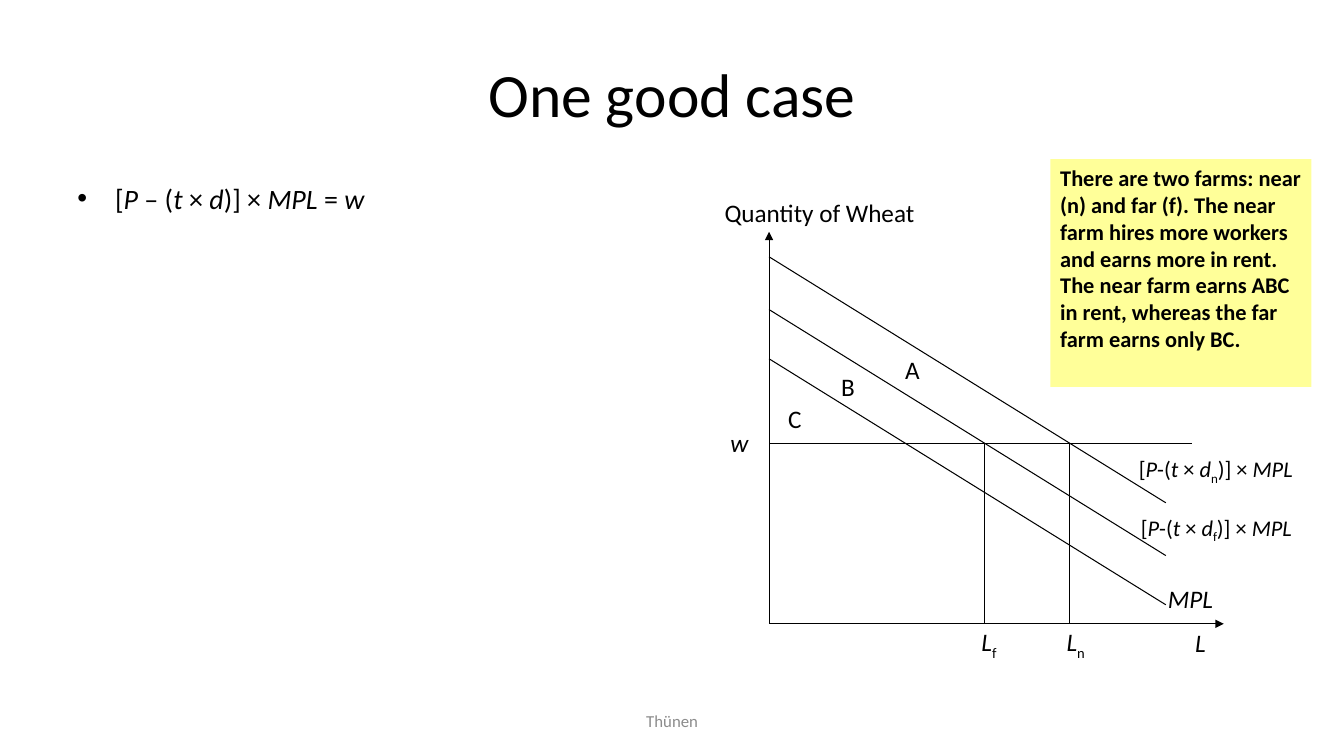
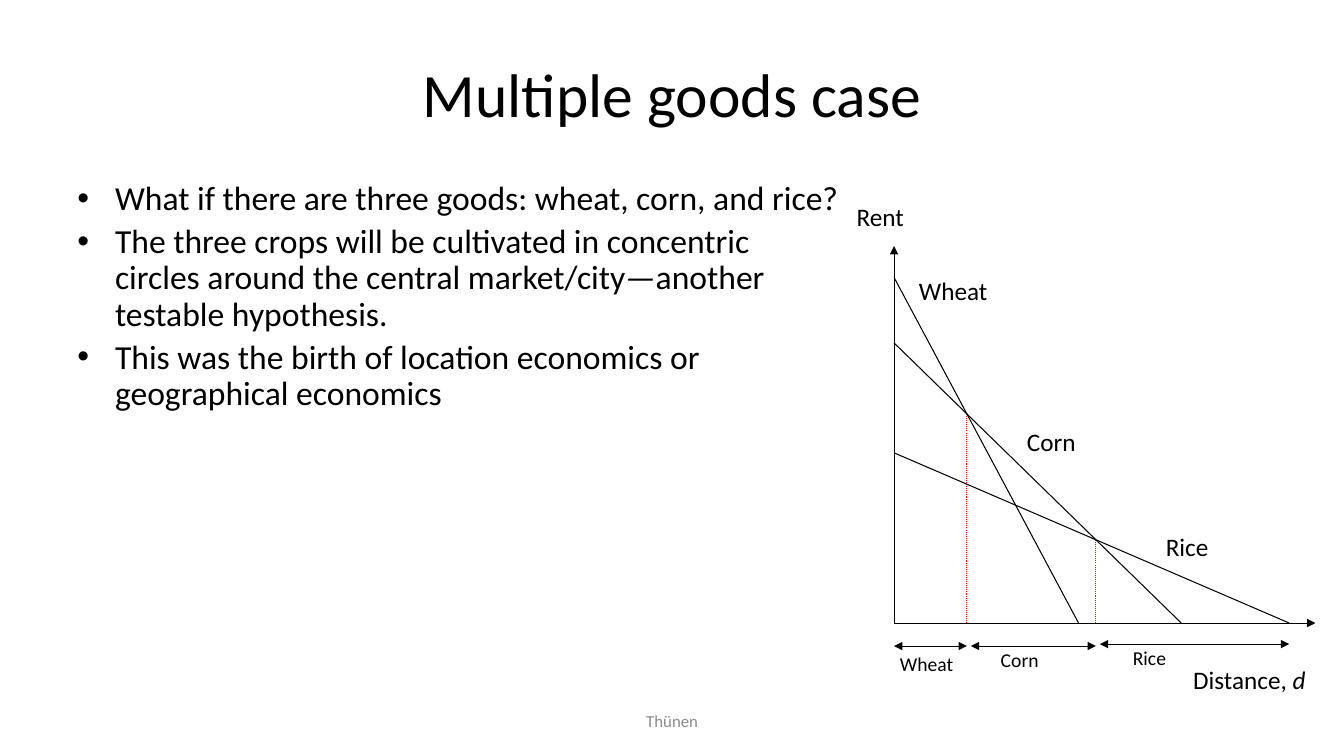
from lxml import etree
from pptx import Presentation
from pptx.dml.color import RGBColor
from pptx.enum.dml import MSO_LINE
from pptx.enum.shapes import MSO_CONNECTOR
from pptx.enum.text import MSO_ANCHOR, PP_ALIGN
from pptx.oxml.ns import qn
from pptx.util import Cm, Pt

STRAIGHT, DOTTED = MSO_CONNECTOR.STRAIGHT, MSO_LINE.ROUND_DOT
TOP, MIDDLE = MSO_ANCHOR.TOP, MSO_ANCHOR.MIDDLE
LEFT, CENTER = PP_ALIGN.LEFT, PP_ALIGN.CENTER

# Shared look; boxes are left, top, width, height in cm
FONT = "Calibri"
BLACK, GREY, RED, YELLOW = "000000", "8C8C8C", "FF0000", "FFFF99"
SLIDE_SIZE = (33.87, 19.05)
TITLE_BOX = (1.7, 0.76, 30.48, 3.18)
FOOTER_BOX = (11.58, 17.65, 10.72, 1.02)
BULLET_INDENT = 0.95


def rgb(value):
    return RGBColor.from_string(value)


# Text: a line is a list of (text, style) runs; i italic, b bold, s subscript
def add_runs(paragraph, runs, size, color=BLACK):
    for text, style in runs:
        run = paragraph.add_run()
        run.text = text
        font = run.font
        font.name, font.size = FONT, Pt(size)
        font.color.rgb = rgb(color)
        font.italic, font.bold = "i" in style, "b" in style
        if "s" in style:
            run._r.get_or_add_rPr().set("baseline", "-25000")


def add_text(slide, box, runs, size, color=BLACK, align=LEFT, anchor=TOP):
    textbox = slide.shapes.add_textbox(*map(Cm, box))
    frame = textbox.text_frame
    frame.word_wrap = True
    frame.vertical_anchor = anchor
    paragraph = frame.paragraphs[0]
    paragraph.alignment = align
    add_runs(paragraph, runs, size, color)
    return textbox


def add_bullets(slide, box, items, size, line_spacing):
    frame = slide.shapes.add_textbox(*map(Cm, box)).text_frame
    frame.word_wrap = True
    for index, runs in enumerate(items):
        paragraph = frame.add_paragraph() if index else frame.paragraphs[0]
        paragraph.line_spacing = line_spacing
        paragraph.space_before = Pt(size * 0.2)
        add_runs(paragraph, runs, size)
        properties = paragraph._p.get_or_add_pPr()
        properties.set("marL", str(Cm(BULLET_INDENT)))
        properties.set("indent", str(-Cm(BULLET_INDENT)))
        etree.SubElement(properties, qn("a:buFont")).set("typeface", "Arial")
        etree.SubElement(properties, qn("a:buChar")).set("char", "•")


class Diagram:
    """Places parts by their distance right of and above the axis origin."""

    def __init__(self, slide, origin, width, height):
        self.slide, self.origin = slide, origin
        self.line((0, 0), (width, 0), tail=True)
        self.line((0, 0), (0, height), tail=True)

    def place(self, x, y):
        return self.origin[0] + x, self.origin[1] - y

    def line(self, start, end, color=BLACK, dash=None, head=False, tail=False):
        ends = self.place(*start) + self.place(*end)
        connector = self.slide.shapes.add_connector(STRAIGHT, *map(Cm, ends))
        connector.line.color.rgb = rgb(color)
        connector.line.width = Pt(0.75)
        if dash:
            connector.line.dash_style = dash
        outline = connector.line._get_or_add_ln()
        for tag, wanted in (("a:headEnd", head), ("a:tailEnd", tail)):
            if wanted:
                etree.SubElement(outline, qn(tag)).set("type", "triangle")
        etree.SubElement(connector._element.spPr, qn("a:effectLst"))

    def label(self, x, y, width, runs, size=18):
        add_text(self.slide, (*self.place(x, y), width, 1.02), runs, size)


def add_base_slide(prs, title_text):
    slide = prs.slides.add_slide(prs.slide_layouts[5])
    title = slide.shapes.title
    title.left, title.top, title.width, title.height = map(Cm, TITLE_BOX)
    frame = title.text_frame
    frame.vertical_anchor = MIDDLE
    frame.paragraphs[0].alignment = CENTER
    add_runs(frame.paragraphs[0], [(title_text, "")], 44)
    add_text(slide, FOOTER_BOX, [("Thünen", "")], 12, GREY, CENTER, MIDDLE)
    return slide


def value_of_labour(farm):
    return [("[", ""), ("P", "i"), ("-(", ""), ("t ", "i"), ("× ", ""),
            ("d", "i"), (farm, "s"), (")] × ", ""), ("MPL", "i")]


def add_labour_diagram(slide, origin):
    diagram = Diagram(slide, origin, 11.46, 9.88)
    run, drop, wage = 10, 6.2, 4.55
    near, far, product = 9.25, 7.92, 6.68

    # Parallel demand curves and the wage
    for height in (product, far, near):
        diagram.line((0, height), (run, height - drop))
    diagram.line((0, wage), (10.65, wage))

    # Labour hired by each farm, where its curve meets the wage
    for height, farm in ((far, "f"), (near, "n")):
        hired = (height - wage) * run / drop
        diagram.line((hired, wage), (hired, 0))
        diagram.label(hired - 0.33, 0.05, 2.03, [("L", "i"), (farm, "s")])

    # Curve names
    diagram.label(9.8, 1.14, 2.03, [("MPL", "i")])
    diagram.label(9.12, 2.9, 4.88, value_of_labour("f"), 16)
    diagram.label(9.07, 4.37, 5.21, value_of_labour("n"), 16)

    # Rent areas
    for name, x, y in (("A", 3.18, 6.91), ("B", 1.57, 6.48), ("C", 0.23, 5.69)):
        diagram.label(x, y, 1.04, [(name, "")])

    # Axis names
    diagram.label(10.49, 0.03, 2.03, [("L", "i")])
    diagram.label(-1.22, 5.08, 1.57, [("w", "i")])
    diagram.label(-1.37, 10.87, 6.48, [("Quantity of Wheat", "")])


def add_rent_diagram(slide, origin):
    diagram = Diagram(slide, origin, 10.62, 9.5)
    # Name, rent at the market, reach, curve label, zone label, zone arrow height
    crops = [
        ("Wheat", 8.71, 4.65, (0.38, 8.89), (-0.1, -0.61), -0.58),
        ("Corn", 7.06, 7.24, (3.1, 5.08), (2.44, -0.51), -0.58),
        ("Rice", 4.29, 9.96, (6.6, 2.44), (5.77, -0.46), -0.53),
    ]

    # Zone borders, where the rents of neighbouring crops are equal
    borders = [0]
    for (_, rent, reach, *_), (_, next_rent, next_reach, *_) in zip(crops, crops[1:]):
        border = (rent - next_rent) / (rent / reach - next_rent / next_reach)
        diagram.line((border, rent * (1 - border / reach)), (border, 0), RED, DOTTED)
        borders.append(border)
    borders.append(crops[-1][2])

    # Rent curves and growing zones
    for index, (name, rent, reach, curve_at, zone_at, level) in enumerate(crops):
        diagram.line((0, rent), (reach, 0))
        start = borders[index] + (0.1 if index else 0)
        diagram.line((start, level), (borders[index + 1], level), head=True, tail=True)
        diagram.label(*curve_at, 2.62, [(name, "")])
        diagram.label(*zone_at, 2.62, [(name, "")], 14)

    # Axis names
    diagram.label(7.29, -0.91, 3.84, [("Distance, ", ""), ("d", "i")])
    diagram.label(-1.19, 10.74, 2.11, [("Rent", "")])


def add_one_good_slide(prs):
    slide = add_base_slide(prs, "One good case")
    condition = [("[", ""), ("P", "i"), (" – (", ""), ("t ", "i"), ("× ", ""),
                 ("d", "i"), (")] × ", ""), ("MPL", "i"), (" = ", ""), ("w", "i")]
    add_bullets(slide, (1.7, 4.45, 15, 12.57), [condition], 20, 1.0)
    add_labour_diagram(slide, (19.38, 15.72))
    note = add_text(slide, (26.47, 4.01, 6.58, 5.74), [(
        "There are two farms: near (n) and far (f). The near farm hires more "
        "workers and earns more in rent. The near farm earns ABC in rent, "
        "whereas the far farm earns only BC.", "b")], 16)
    note.fill.solid()
    note.fill.fore_color.rgb = rgb(YELLOW)


def add_multiple_goods_slide(prs):
    slide = add_base_slide(prs, "Multiple goods case")
    points = [
        "What if there are three goods: wheat, corn, and rice?",
        "The three crops will be cultivated in concentric circles around the "
        "central market/city—another testable hypothesis.",
        "This was the birth of location economics or geographical economics",
    ]
    add_bullets(slide, (1.7, 4.45, 19.71, 12.57),
                [[(point, "")] for point in points], 24, 0.9)
    add_rent_diagram(slide, (22.53, 15.7))


def main():
    prs = Presentation()
    prs.slide_width, prs.slide_height = map(Cm, SLIDE_SIZE)
    add_one_good_slide(prs)
    add_multiple_goods_slide(prs)
    prs.save("out.pptx")


if __name__ == "__main__":
    main()
